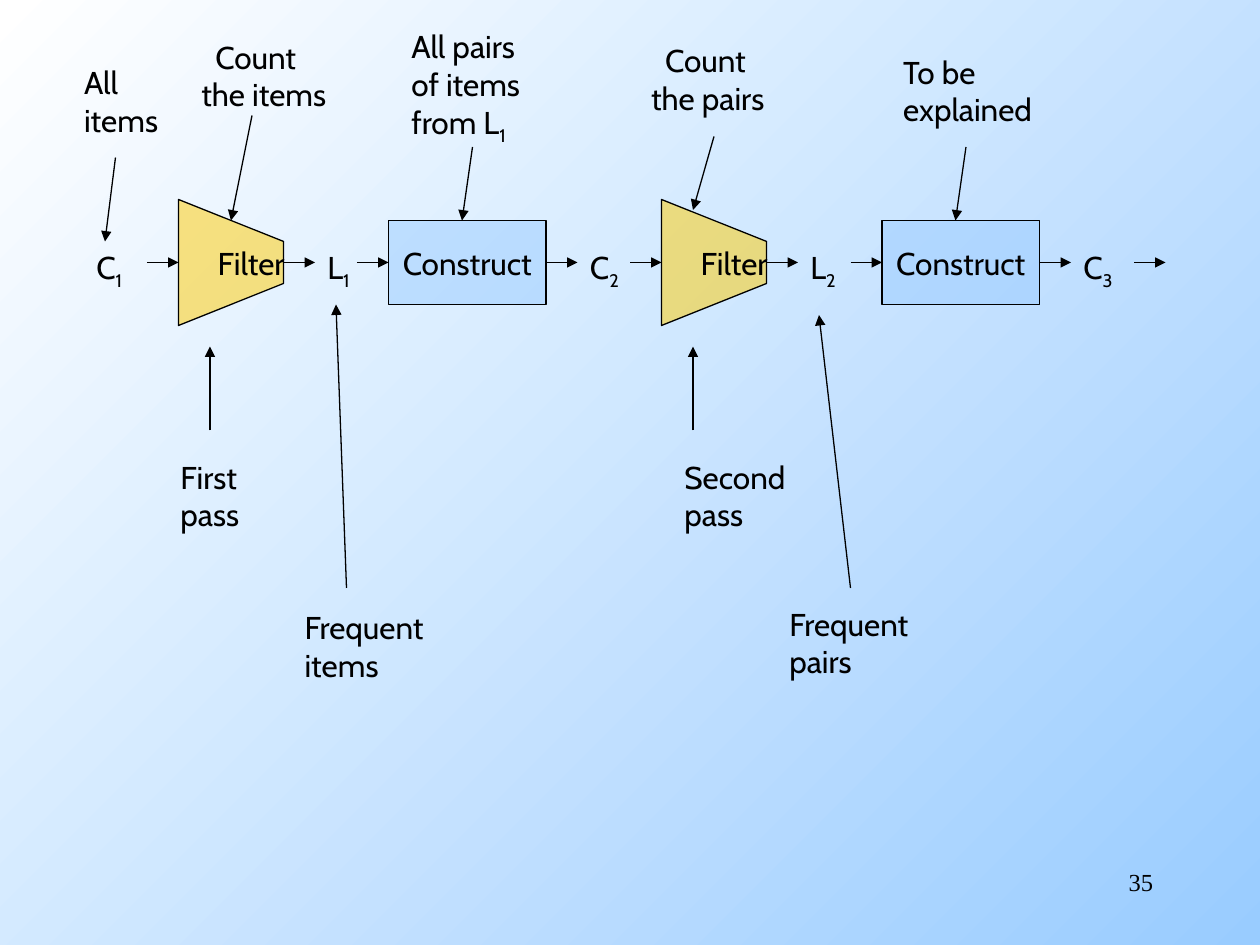
from pptx import Presentation
from pptx.dml.color import RGBColor
from pptx.enum.shapes import MSO_CONNECTOR, MSO_SHAPE
from pptx.enum.text import MSO_ANCHOR, MSO_AUTO_SIZE, PP_ALIGN
from pptx.oxml.ns import qn
from pptx.util import Pt
from lxml.etree import SubElement

INK = "000000"
MID = 150    # height of the flow line
STEP = 18    # length of a flow arrow
BODY = {"name": "Cabin", "size": Pt(18)}
PAGE = {"name": "Times New Roman", "size": Pt(14)}


def color(code):
    return RGBColor.from_string(code)


def set_all(item, values):
    for name, value in values.items():
        setattr(item, name, value)


def write(frame, lines, font=BODY, align=PP_ALIGN.LEFT, indent=0):
    """Fill a frame; "L_1" sets the 1 as a subscript, indent moves line one."""
    for i, line in enumerate(lines):
        para = frame.paragraphs[0] if i == 0 else frame.add_paragraph()
        para.alignment = align
        if i == 0 and indent:
            para._p.get_or_add_pPr().set("marL", str(Pt(indent)))
        for j, part in enumerate(line.split("_")):
            run = para.add_run()
            run.text = part
            set_all(run.font, font)
            run.font.color.rgb = color(INK)
            if j:
                run._r.get_or_add_rPr().set("baseline", "-25000")


def add_text(shapes, x, y, wide, lines, indent=0):
    high = 21.6 * len(lines) + 7.2
    box = shapes.add_textbox(Pt(x), Pt(y), Pt(wide), Pt(high))
    set_all(box.text_frame, {"word_wrap": False,
                             "auto_size": MSO_AUTO_SIZE.SHAPE_TO_FIT_TEXT})
    write(box.text_frame, lines, indent=indent)


def add_arrow(shapes, start, end):
    line = shapes.add_connector(MSO_CONNECTOR.STRAIGHT,
                                *(Pt(v) for v in (*start, *end)))
    line.line.color.rgb = color(INK)
    line.line.width = Pt(0.75)
    SubElement(line.line._get_or_add_ln(), qn("a:tailEnd"), type="triangle")
    SubElement(line._element.spPr, qn("a:effectLst"))
    return line


def paint(shape, fill, word, left=7.2, right=7.2):
    """Give a stage its half clear fill, thin outline and centred word."""
    shape.shadow.inherit = False
    shape.fill.solid()
    shape.fill.fore_color.rgb = color(fill)
    tint = next(shape._element.spPr.iter(qn("a:srgbClr")))
    SubElement(tint, qn("a:alpha"), val="50000")
    shape.line.color.rgb = color(INK)
    shape.line.width = Pt(0.75)
    set_all(shape.text_frame, {
        "word_wrap": False, "vertical_anchor": MSO_ANCHOR.MIDDLE,
        "margin_left": Pt(left), "margin_right": Pt(right)})
    write(shape.text_frame, [word], align=PP_ALIGN.CENTER)


def add_filter(shapes, x):
    dots = [(x, MID + 36), (x + 60, MID + 12),
            (x + 60, MID - 12), (x, MID - 36)]
    first, *rest = [(Pt(a), Pt(b)) for a, b in dots]
    pen = shapes.build_freeform(*first)
    pen.add_line_segments(rest, close=True)
    paint(pen.convert_to_shape(), "FFCC00", "Filter", 23, 0)


def add_build(shapes, x):
    box = shapes.add_shape(MSO_SHAPE.RECTANGLE,
                           Pt(x), Pt(MID - 24), Pt(90), Pt(48))
    paint(box, "99CCFF", "Construct")
    into = add_arrow(shapes, (x - STEP, MID), (x, MID))
    into.end_connect(box, 1)
    out = add_arrow(shapes, (x + 90, MID), (x + 90 + STEP, MID))
    out.begin_connect(box, 3)


def add_note(shapes, x, y, wide, lines, start, end, indent=0):
    """Group a label with the arrow to what it explains."""
    group = shapes.add_group_shape().shapes
    add_text(group, x, y, wide, lines, indent)
    add_arrow(group, start, end)


def add_page(shapes):
    box = shapes.add_textbox(Pt(516), Pt(492), Pt(150), Pt(36))
    box.text_frame.word_wrap = True
    write(box.text_frame, ["35"], PAGE, PP_ALIGN.RIGHT)


def add_back(slide):
    fill = slide.background.fill
    fill.gradient()
    fill.gradient_angle = 315
    for stop, code in zip(fill.gradient_stops, ("FFFFFF", "99CCFF")):
        stop.color.rgb = color(code)


def main():
    deck = Presentation()
    deck.slide_width, deck.slide_height = Pt(720), Pt(540)
    slide = deck.slides.add_slide(deck.slide_layouts[6])
    shapes = slide.shapes
    add_back(slide)
    add_page(shapes)

    sets = {"C_1": 48, "L_1": 180, "C_2": 330, "L_2": 456, "C_3": 612}
    for name, x in sets.items():
        add_text(shapes, x, 138, 31, [name])
    for x in (102, 378):
        add_filter(shapes, x)
    for x in (222, 504):
        add_build(shapes, x)
    for x in (84, 162, 360, 438, 648):
        add_arrow(shapes, (x, MID), (x + STEP, MID))

    notes = [
        (96, 258, 50, ["First", "pass"], (120, 246), (120, 198)),
        (384, 258, 72, ["Second", "pass"], (396, 246), (396, 198)),
        (41, 32.5, 57.5, ["All", "items"], (66, 90), (60, 138)),
        (228, 12, 78.5, ["All pairs", "of items", "from L_1"],
         (270, 84), (264, 126)),
        (365, 20, 83.5, ["Count", "the pairs"], (408, 78), (396, 120), 8),
        (509, 26.5, 90, ["To be", "explained"], (552, 84), (546, 126)),
        (108, 18, 88.5, ["Count", "the items"], (144, 66), (132, 126), 8),
        (167, 344, 85.5, ["Frequent", "items"], (198, 336), (192, 174)),
        (444, 342, 85.5, ["Frequent", "pairs"], (486, 336), (468, 180)),
    ]
    for note in notes:
        add_note(shapes, *note)
    deck.save("out.pptx")


if __name__ == "__main__":
    main()
